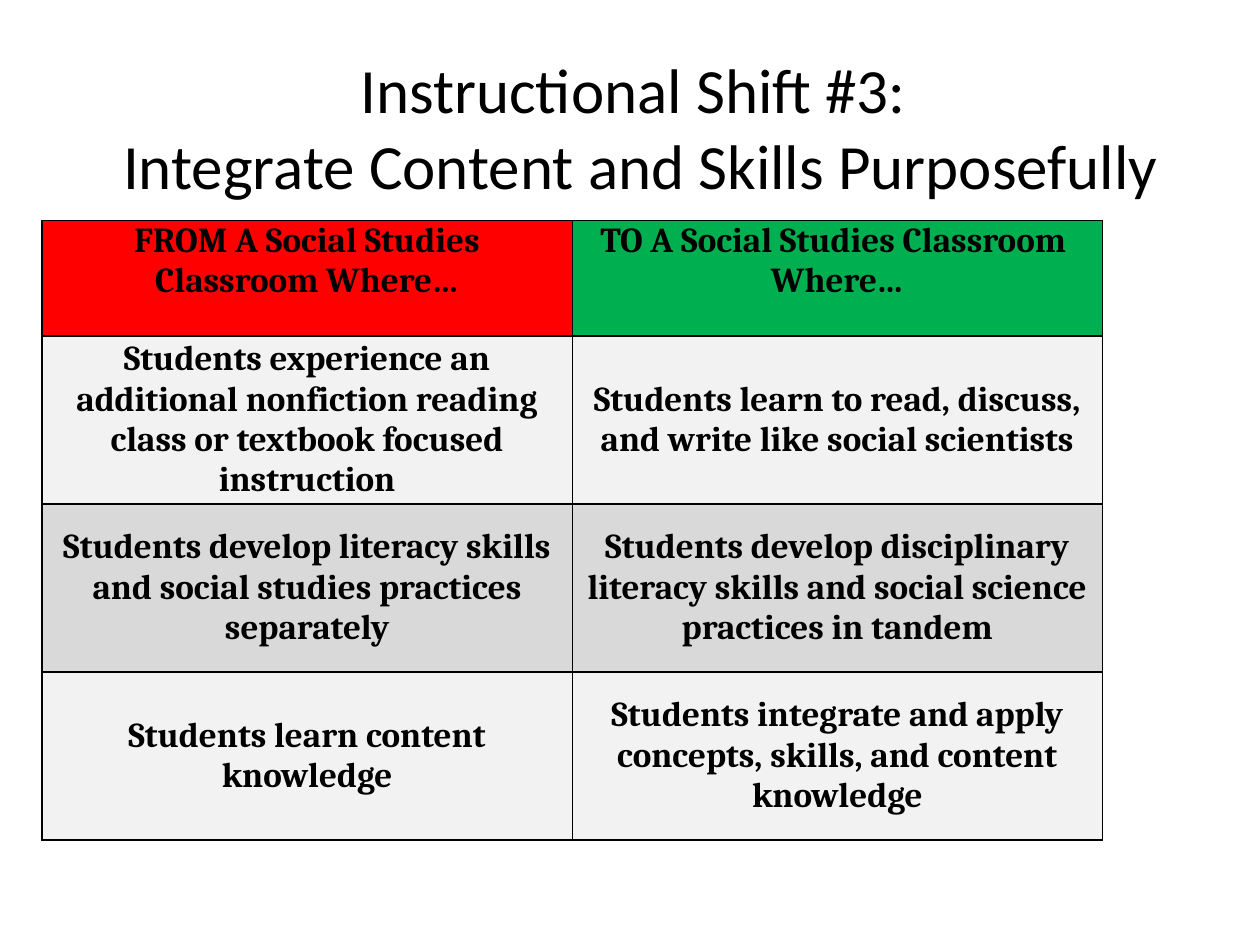
from lxml.etree import SubElement as Sub
from pptx import Presentation
from pptx.dml.color import RGBColor as Rgb
from pptx.enum.text import MSO_ANCHOR as Anchor, PP_ALIGN as Align
from pptx.oxml.ns import qn
from pptx.util import Pt

BLACK = Rgb(0x00, 0x00, 0x00)
RED = Rgb(0xFF, 0x00, 0x00)
GREEN = Rgb(0x00, 0xB0, 0x50)
LIGHT = Rgb(0xF2, 0xF2, 0xF2)
GRAY = Rgb(0xD9, 0xD9, 0xD9)

TITLE = "Instructional Shift #3: \vIntegrate Content and Skills Purposefully"
ROWS = [
    ("FROM A Social Studies Classroom Where…",
     "TO A Social Studies Classroom \nWhere…"),
    ("Students experience an additional nonfiction reading class "
     "or textbook focused instruction",
     "Students learn to read, discuss, and write like social scientists"),
    ("Students develop literacy skills and social studies practices separately",
     "Students develop disciplinary literacy skills and social science "
     "practices in tandem"),
    ("Students learn content knowledge",
     "Students integrate and apply concepts, skills, and content knowledge"),
]
FILLS = [(RED, GREEN), (LIGHT, LIGHT), (GRAY, GRAY), (LIGHT, LIGHT)]


class Page:
    head, body = "Calibri", "Cambria"
    big, small = 36, 20

    def __init__(self, slide):
        self.slide = slide

    def style(self, frame, face, size, bold):
        for para in frame.paragraphs:
            para.alignment = Align.CENTER
            for run in para.runs:
                font = run.font
                font.name, font.size, font.bold = face, Pt(size), bold
                font.color.rgb = BLACK

    def title(self, text, left, top, width, height):
        box = self.slide.shapes.title
        box.left, box.top = Pt(left), Pt(top)
        box.width, box.height = Pt(width), Pt(height)
        frame = box.text_frame
        frame.text = text
        frame.vertical_anchor = Anchor.MIDDLE
        self.style(frame, self.head, self.big, False)
        # Line breaks take the size of the text
        for line in frame.paragraphs[0]._p.findall(qn("a:br")):
            Sub(line, qn("a:rPr"), sz=str(self.big * 100))

    def border(self, cell):
        props = cell._tc.get_or_add_tcPr()
        for spot, side in enumerate(("lnL", "lnR", "lnT", "lnB")):
            line = Sub(props, qn(f"a:{side}"), w=str(Pt(1)))
            fill = Sub(line, qn("a:solidFill"))
            Sub(fill, qn("a:srgbClr"), val=str(BLACK))
            props.insert(spot, line)

    def cell(self, cell, text, fill, anchor):
        cell.text_frame.text = text
        cell.vertical_anchor = anchor
        cell.margin_left = cell.margin_right = Pt(5)
        cell.margin_top = cell.margin_bottom = 0
        cell.fill.solid()
        cell.fill.fore_color.rgb = fill
        self.style(cell.text_frame, self.body, self.small, True)
        self.border(cell)

    def table(self, rows, fills, left, top, widths, heights):
        grid = self.slide.shapes.add_table(
            len(rows), len(widths), Pt(left), Pt(top),
            Pt(sum(widths)), Pt(sum(heights))).table
        for col, width in zip(grid.columns, widths):
            col.width = Pt(width)
        for row, height in zip(grid.rows, heights):
            row.height = Pt(height)
        for r, (texts, tints) in enumerate(zip(rows, fills)):
            anchor = Anchor.MIDDLE if r else Anchor.TOP
            for c, (text, tint) in enumerate(zip(texts, tints)):
                self.cell(grid.cell(r, c), text, tint, anchor)


def main():
    deck = Presentation()
    deck.slide_width, deck.slide_height = Pt(720), Pt(540)
    page = Page(deck.slides.add_slide(deck.slide_layouts[5]))

    # Heading
    page.title(TITLE, 18, 24, 696, 96)

    # From / to comparison
    page.table(ROWS, FILLS, 24, 126, [303] * 2, [66] + [96] * 3)

    deck.save("out.pptx")


if __name__ == "__main__":
    main()
